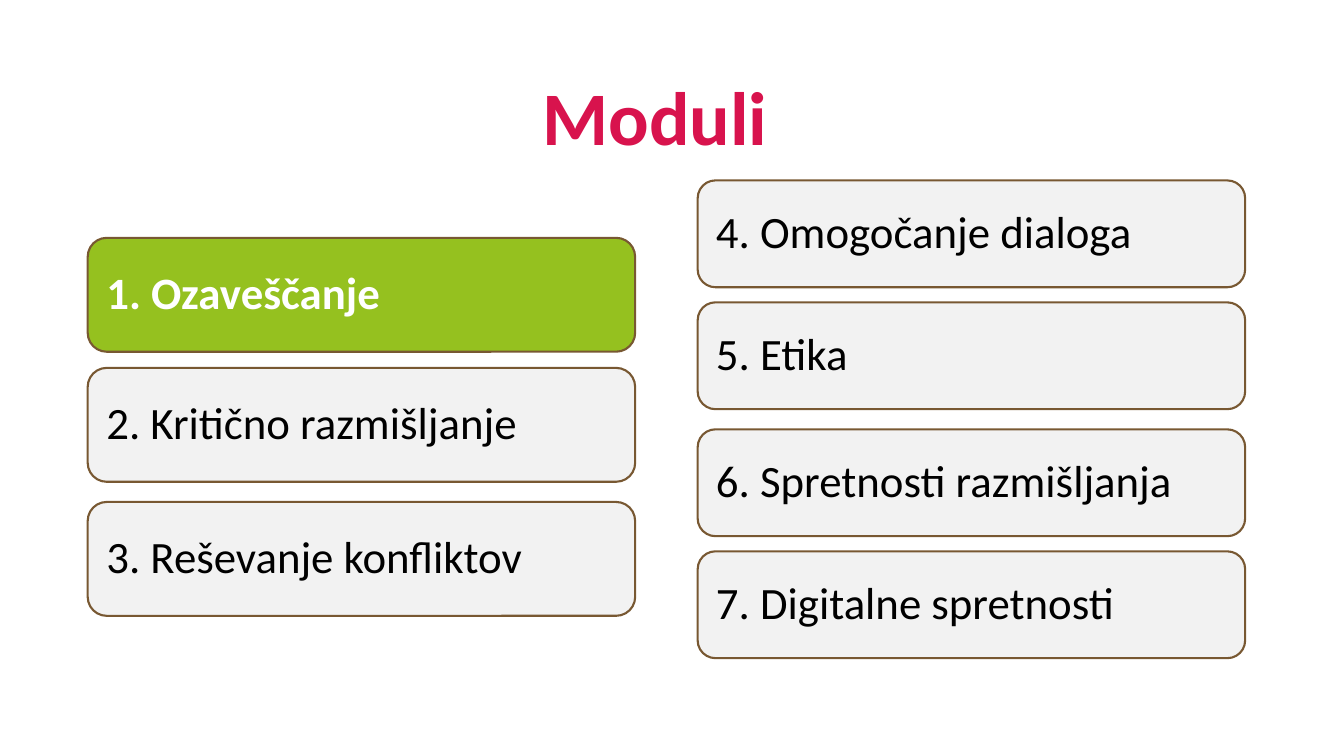
from pptx import Presentation, util as u
from pptx.dml.color import RGBColor
from pptx.enum import shapes, text

THEME = {
    "font": "Calibri", "title_size": 54, "module_size": 32, "line_width": 1.5,
    "title": "D8134D", "active": "95C11F", "idle": "F2F2F2",
    "border": "785832", "dark": "000000", "light": "FFFFFF",
}
COLUMNS = [
    (0.87, 1.13, [(2.36, "1. Ozaveščanje"),
                  (3.65, "2. Kritično razmišljanje"),
                  (4.98, "3. Reševanje konfliktov")]),
    (6.92, 1.06, [(1.79, "4. Omogočanje dialoga"),
                  (3.0, "5. Etika"),
                  (4.26, "6. Spretnosti razmišljanja"),
                  (5.47, "7. Digitalne spretnosti")]),
]
COLUMN_WIDTH = 5.43
INSET = 0.13
ACTIVE_MODULE = "1. Ozaveščanje"


def rgb(name):
    return RGBColor.from_string(THEME[name])


def write(tf, content, size, color, bold, align, anchor):
    tf.word_wrap = True
    tf.vertical_anchor = anchor
    p = tf.paragraphs[0]
    p.text = content
    p.alignment = align
    p.line_spacing = 0.9
    r = p.runs[0]
    r.font.name = THEME["font"]
    r.font.size = u.Pt(THEME[size])
    r.font.bold = bold
    r.font.color.rgb = rgb(color)


prs = Presentation()
prs.slide_width, prs.slide_height = u.Inches(13.33), u.Inches(7.5)
s = prs.slides.add_slide(prs.slide_layouts[6])

title = s.shapes.add_textbox(u.Inches(0.01), u.Inches(-0.3), u.Inches(12.97), u.Inches(1.95))
write(title.text_frame, "Moduli", "title_size", "title", True,
      text.PP_ALIGN.CENTER, text.MSO_ANCHOR.BOTTOM)

for left, height, modules in COLUMNS:
    for top, label in modules:
        active = label == ACTIVE_MODULE
        sp = s.shapes.add_shape(shapes.MSO_SHAPE.ROUNDED_RECTANGLE, u.Inches(left),
                                u.Inches(top), u.Inches(COLUMN_WIDTH), u.Inches(height))
        sp.shadow.inherit = False
        sp.fill.solid()
        sp.fill.fore_color.rgb = rgb("active" if active else "idle")
        sp.line.color.rgb = rgb("border")
        sp.line.width = u.Pt(THEME["line_width"])
        tf = sp.text_frame
        tf.margin_left = tf.margin_right = tf.margin_top = tf.margin_bottom = u.Inches(INSET)
        write(tf, label, "module_size", "light" if active else "dark", active,
              text.PP_ALIGN.LEFT, text.MSO_ANCHOR.MIDDLE)

prs.save("out.pptx")
